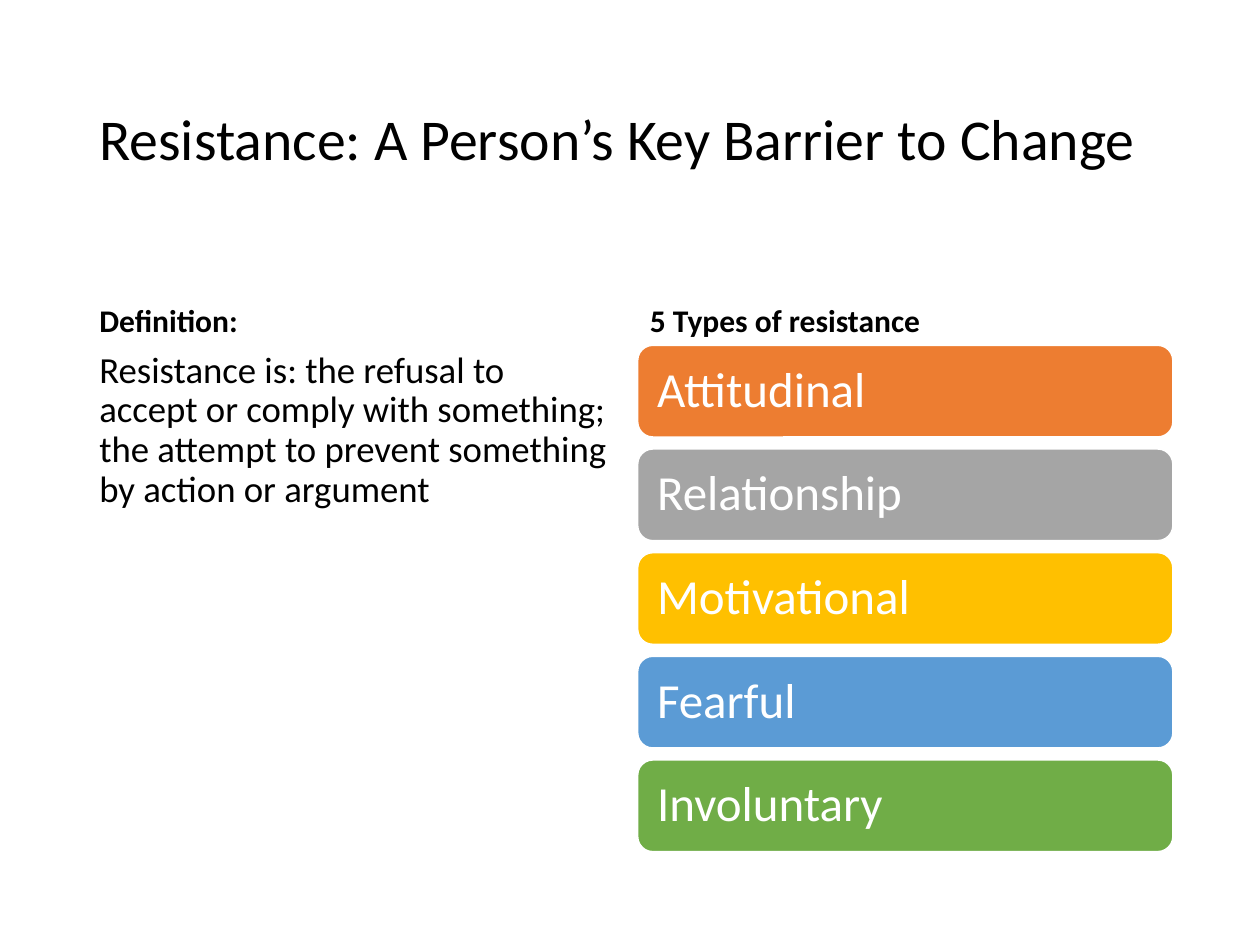
from pptx import Presentation
from pptx.dml.color import RGBColor
from pptx.enum.shapes import MSO_SHAPE
from pptx.enum.text import MSO_ANCHOR, PP_ALIGN
from pptx.util import Inches, Pt

BLACK = RGBColor(0x00, 0x00, 0x00)
WHITE = RGBColor(0xFF, 0xFF, 0xFF)
ORANGE = RGBColor(0xED, 0x7D, 0x31)
GRAY = RGBColor(0xA5, 0xA5, 0xA5)
GOLD = RGBColor(0xFF, 0xC0, 0x00)
BLUE = RGBColor(0x5B, 0x9B, 0xD5)
GREEN = RGBColor(0x70, 0xAD, 0x47)

# Percent of the slide's width
LEFT, LEFT_W = 6.9, 42.3
RIGHT, RIGHT_W = 50.6, 42.5
FULL_W = 86.2
# Percent of the slide's height
TITLE, TITLE_H = 5.33, 19.33
HEAD, HEAD_H = 24.53, 12
BODY, BODY_H = 36.53, 53.73
BAR_H, STEP = 9.73, 10.97

TYPES = [
    ("Attitudinal", ORANGE),
    ("Relationship", GRAY),
    ("Motivational", GOLD),
    ("Fearful", BLUE),
    ("Involuntary", GREEN),
]


class Deck:
    """Holds the style and the current slide; lengths are percent of its size."""

    font = "Calibri"
    inset = Inches(0.12)

    def __init__(self):
        self.prs = Presentation()
        self.prs.slide_width, self.prs.slide_height = Inches(10), Inches(7.5)
        self.slide = self.prs.slides.add_slide(self.prs.slide_layouts[6])

    def place(self, left, top, width, height):
        wide, high = self.prs.slide_width, self.prs.slide_height
        shares = (left, wide), (top, high), (width, wide), (height, high)
        return [round(share * size / 100) for share, size in shares]

    def label(self, shape, text, size, color, anchor, bold=False, before=0):
        frame = shape.text_frame
        frame.word_wrap = True
        frame.vertical_anchor = anchor
        par = frame.paragraphs[0]
        par.text = text
        par.alignment = PP_ALIGN.LEFT
        par.line_spacing = 0.9
        par.space_before = Pt(before)
        par.font.name = self.font
        par.font.size = Pt(size)
        par.font.bold = bold
        par.font.color.rgb = color

    def text(self, text, box, size, anchor, **style):
        shape = self.slide.shapes.add_textbox(*self.place(*box))
        self.label(shape, text, size, BLACK, anchor, **style)

    def bar(self, text, box, color):
        shape = self.slide.shapes.add_shape(
            MSO_SHAPE.ROUNDED_RECTANGLE, *self.place(*box))
        shape.shadow.inherit = False
        shape.fill.solid()
        shape.fill.fore_color.rgb = color
        shape.line.color.rgb = WHITE
        shape.line.width = Pt(1)
        frame = shape.text_frame
        frame.margin_left = frame.margin_right = self.inset
        frame.margin_top = frame.margin_bottom = self.inset
        self.label(shape, text, 28, WHITE, MSO_ANCHOR.MIDDLE)


def main():
    deck = Deck()
    deck.text("Resistance: A Person’s Key Barrier to Change",
              (LEFT, TITLE, FULL_W, TITLE_H), 33, MSO_ANCHOR.MIDDLE)
    for head, left, width in (("Definition:", LEFT, LEFT_W),
                              ("5 Types of resistance", RIGHT, RIGHT_W)):
        deck.text(head, (left, HEAD, width, HEAD_H), 18, MSO_ANCHOR.BOTTOM,
                  bold=True, before=7.5)
    deck.text("Resistance is: the refusal to accept or comply with something; "
              "the attempt to prevent something by action or argument",
              (LEFT, BODY, LEFT_W, BODY_H), 21, MSO_ANCHOR.TOP, before=7.5)
    for row, (name, color) in enumerate(TYPES):
        deck.bar(name, (RIGHT, BODY + row * STEP, RIGHT_W, BAR_H), color)
    deck.prs.save("out.pptx")


if __name__ == "__main__":
    main()
